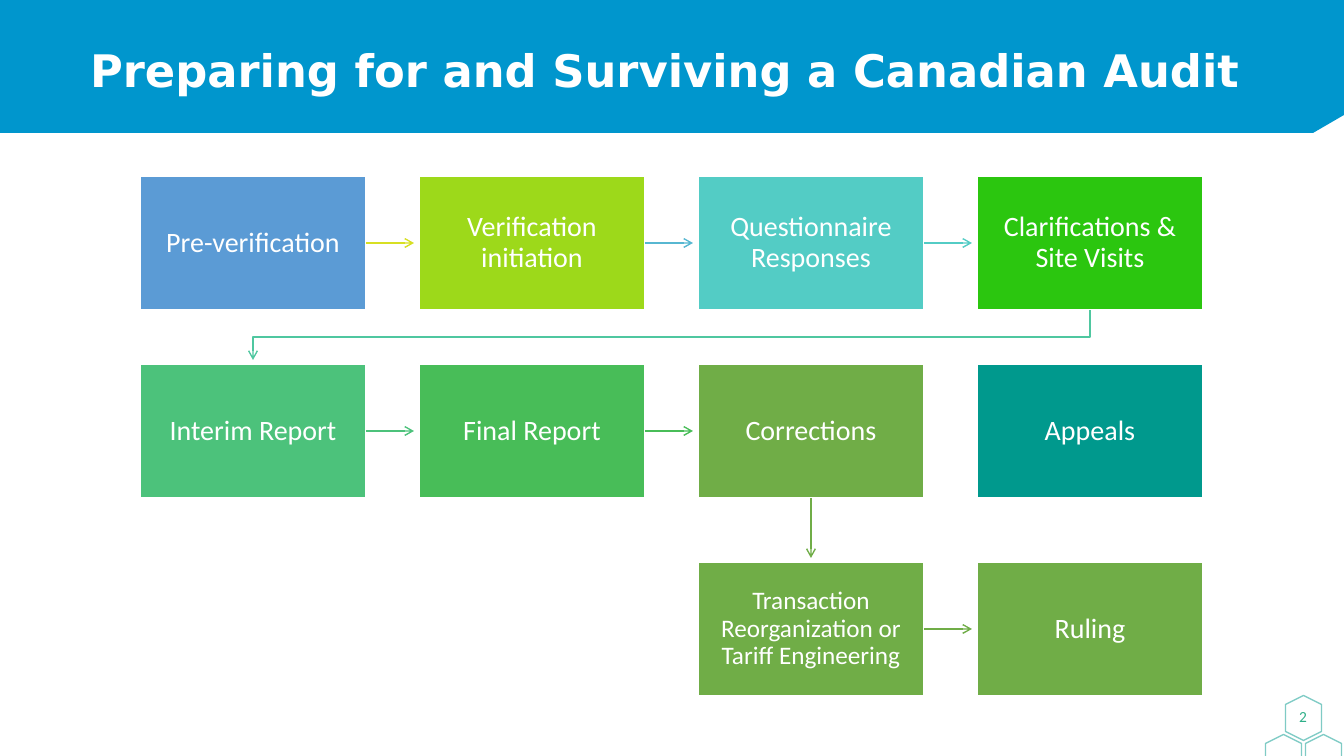
"""Build the audit process slide: banner title, stage boxes and arrows."""
import pptx
import pptx.util
from pptx.dml.color import RGBColor
from pptx.enum.shapes import MSO_CONNECTOR, MSO_SHAPE
from pptx.enum.text import MSO_ANCHOR, MSO_AUTO_SIZE, PP_ALIGN
from pptx.oxml.ns import qn
from lxml import etree

WHITE = RGBColor(0xFF, 0xFF, 0xFF)
BANNER_BLUE = RGBColor(0x00, 0x96, 0xCD)
BLUE = RGBColor(0x5B, 0x9B, 0xD5)
LIME = RGBColor(0x9D, 0xD9, 0x1A)
AQUA = RGBColor(0x53, 0xCC, 0xC5)
BRIGHT_GREEN = RGBColor(0x2B, 0xC6, 0x0F)
MINT = RGBColor(0x4C, 0xC2, 0x7B)
GREEN = RGBColor(0x48, 0xBD, 0x58)
OLIVE = RGBColor(0x70, 0xAD, 0x47)
TEAL = RGBColor(0x00, 0x99, 0x8D)
YELLOW = RGBColor(0xD7, 0xDF, 0x23)
SKY = RGBColor(0x57, 0xB7, 0xD1)
SEA = RGBColor(0x4F, 0xC7, 0xA0)
NUMBER_GREEN = RGBColor(0x2D, 0xAF, 0x88)

TITLE = "Preparing for and Surviving a Canadian Audit"
PAGE = "2"
STAGES = [
    ("Pre-verification", 0, 0, BLUE, 20),
    ("Verification initiation", 0, 1, LIME, 20),
    ("Questionnaire Responses", 0, 2, AQUA, 20),
    ("Clarifications & Site Visits", 0, 3, BRIGHT_GREEN, 20),
    ("Interim Report", 1, 0, MINT, 20),
    ("Final Report", 1, 1, GREEN, 20),
    ("Corrections", 1, 2, OLIVE, 20),
    ("Appeals", 1, 3, TEAL, 20),
    ("Transaction Reorganization or Tariff Engineering", 2, 2, OLIVE, 18),
    ("Ruling", 2, 3, OLIVE, 20),
]
RIGHT_ARROWS = [(0, 0, YELLOW), (0, 1, SKY), (0, 2, AQUA),
                (1, 0, MINT), (1, 1, GREEN), (2, 2, OLIVE)]
HEXAGONS = [(1281, 700), (1301, 739), (1261, 739)]

SCALE = 914400 / 100.8
LEFT, STEP, BOX_W, BOX_H = 140, 279, 226, 134
ROW_TOPS = [176, 364, 562]
ARROW, TIP_GAP, INSET = 48, 4, 16


def px(*lengths):
    """Turn px lengths into EMU."""
    return [pptx.util.Emu(round(n * SCALE)) for n in lengths]


def style_text(tf, text, size, color, font="Calibri", align=PP_ALIGN.CENTER, inset=0):
    """Write one paragraph and format it."""
    tf.text = text
    tf.word_wrap = True
    tf.auto_size = MSO_AUTO_SIZE.NONE
    tf.vertical_anchor = MSO_ANCHOR.MIDDLE
    tf.margin_left, tf.margin_top, tf.margin_right, tf.margin_bottom = px(*[inset] * 4)
    p = tf.paragraphs[0]
    p.alignment, p.line_spacing = align, 0.9
    r = p.runs[0]
    r.font.name, r.font.size = font, pptx.util.Pt(size)
    r.font.color.rgb = color
    return r


def set_line(shape, color):
    """Give a shape a one-point line and return its line element."""
    shape.line.color.rgb = color
    shape.line.width = pptx.util.Pt(1)
    return shape.element.spPr.find(qn("a:ln"))


def add_arrowhead(shape, color):
    """Colour a line and point its end."""
    etree.SubElement(set_line(shape, color), qn("a:tailEnd"), type="arrow")


def add_outline(s, points, close):
    """Draw a freeform through px points."""
    builder = s.shapes.build_freeform(*points[0], scale=SCALE)
    builder.add_line_segments(points[1:], close=close)
    shape = builder.convert_to_shape()
    shape.shadow.inherit = False
    return shape


def add_arrow(s, box, site, start, end, color):
    """Run an arrow from the side of a box."""
    c = s.shapes.add_connector(MSO_CONNECTOR.STRAIGHT, *px(*start, *end))
    c.begin_connect(box, site)
    add_arrowhead(c, color)
    etree.SubElement(c.element.spPr, qn("a:effectLst"))


def add_frame(s):
    """Add the banner, title, hexagons and page number."""
    banner = add_outline(s, [(0, 0), (1344, 0), (1344, 115), (1313, 133), (0, 133)], True)
    banner.fill.solid()
    banner.fill.fore_color.rgb = BANNER_BLUE
    banner.line.fill.background()
    for x, y in HEXAGONS:
        h = s.shapes.add_shape(MSO_SHAPE.HEXAGON, *px(x, y, 45, 36))
        h.rotation = 90
        h.shadow.inherit = False
        h.fill.background()
        ln = set_line(h, TEAL)
        etree.SubElement(ln.find(".//" + qn("a:srgbClr")), qn("a:alpha"), val="50000")
    title = s.shapes.title
    s.shapes.element.append(title.element)
    title.left, title.top, title.width, title.height = px(80, 19, 1185, 108)
    r = style_text(title.text_frame, TITLE, 32, WHITE, "DejaVu Sans", PP_ALIGN.LEFT, 10)
    r.font.bold = True
    number = s.shapes.add_textbox(*px(1283, 701, 40, 33))
    style_text(number.text_frame, PAGE, 11, NUMBER_GREEN)


def add_stages(s):
    """Add the stage boxes and return them by row and column."""
    boxes = {}
    for text, row, col, color, size in STAGES:
        sp = s.shapes.add_shape(MSO_SHAPE.RECTANGLE,
                                *px(LEFT + col * STEP, ROW_TOPS[row], BOX_W, BOX_H))
        sp.shadow.inherit = False
        sp.fill.solid()
        sp.fill.fore_color.rgb = color
        set_line(sp, WHITE)
        style_text(sp.text_frame, text, size, WHITE, inset=INSET)
        boxes[row, col] = sp
    return boxes


def add_flow(s, boxes):
    """Add the arrows between stages."""
    for row, col, color in RIGHT_ARROWS:
        x, y = LEFT + col * STEP + BOX_W, ROW_TOPS[row] + BOX_H // 2
        add_arrow(s, boxes[row, col], 3, (x, y), (x + ARROW, y), color)
    x = LEFT + 2 * STEP + BOX_W // 2
    add_arrow(s, boxes[1, 2], 2, (x, ROW_TOPS[1] + BOX_H),
              (x, ROW_TOPS[2] - TIP_GAP), OLIVE)
    first, last = LEFT + BOX_W // 2, LEFT + 3 * STEP + BOX_W // 2
    bottom = ROW_TOPS[0] + BOX_H
    middle = (bottom + ROW_TOPS[1]) // 2
    wrap = add_outline(s, [(last, bottom), (last, middle), (first, middle),
                           (first, ROW_TOPS[1] - TIP_GAP)], False)
    wrap.fill.background()
    add_arrowhead(wrap, SEA)


def main():
    """Build and save the slide."""
    prs = pptx.Presentation()
    prs.slide_width, prs.slide_height = px(1344, 756)
    s = prs.slides.add_slide(prs.slide_layouts[5])
    add_frame(s)
    add_flow(s, add_stages(s))
    prs.save("out.pptx")


if __name__ == "__main__":
    main()
